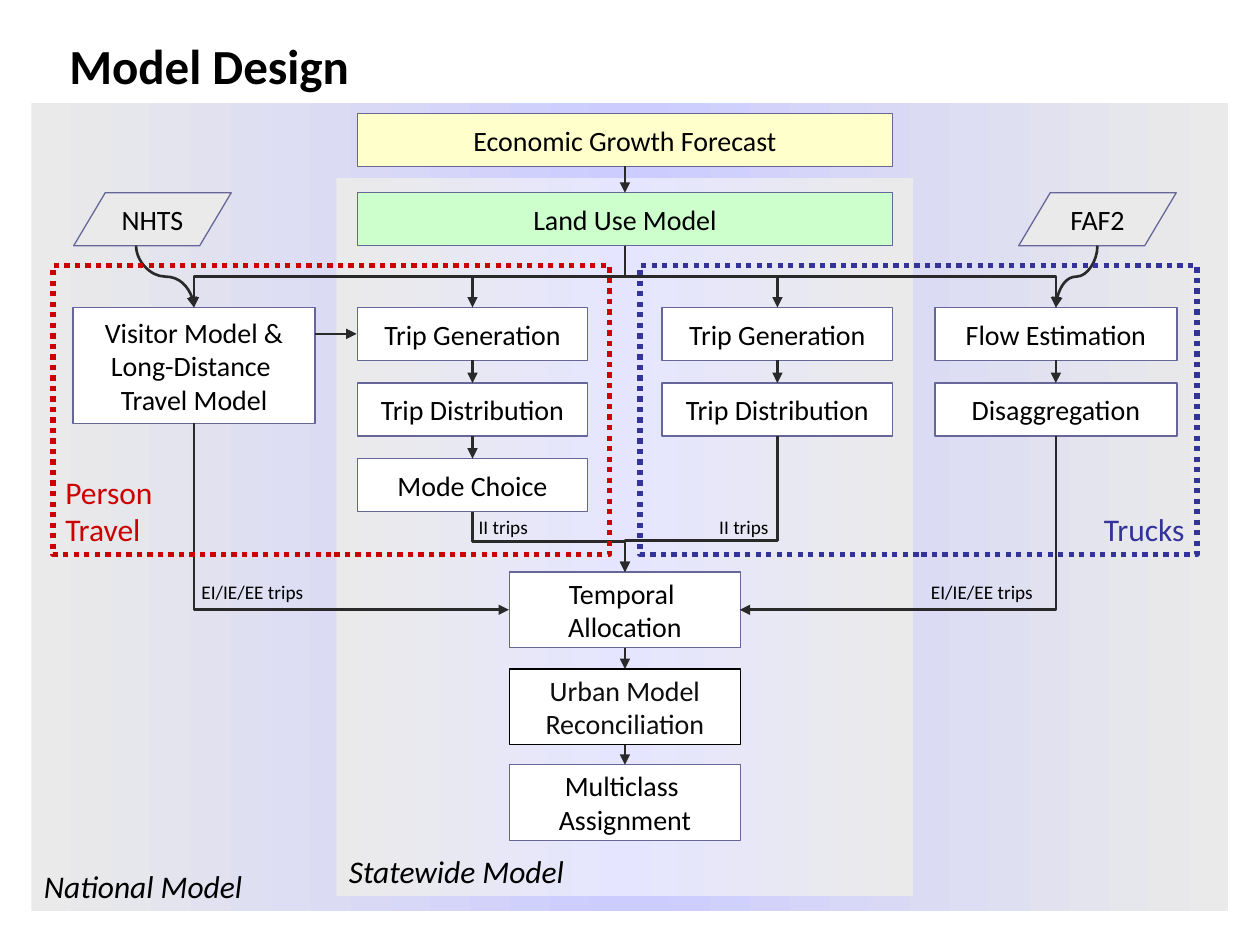
from copy import deepcopy

from lxml.etree import SubElement
from pptx import Presentation
from pptx.dml.color import RGBColor
from pptx.enum.dml import MSO_LINE
from pptx.enum.shapes import MSO_CONNECTOR, MSO_SHAPE
from pptx.enum.text import MSO_ANCHOR, PP_ALIGN
from pptx.oxml.ns import qn
from pptx.util import Inches, Pt

COLORS = {
    "black": "000000", "soft_black": "0D0D0D", "white": "FFFFFF",
    "gray": "EAEAEA", "lavender": "CCCCFF", "pale_lavender": "E5E5FF",
    "yellow": "FFFFCC", "green": "CCFFCC", "outline": "666699",
    "arrow": "292929", "red": "CC0000", "navy": "333399",
}
RGB = {name: RGBColor.from_string(value) for name, value in COLORS.items()}


def write(shape, text, size, color="black", align=PP_ALIGN.LEFT,
          anchor=MSO_ANCHOR.TOP, bold=False, italic=False):
    frame = shape.text_frame
    frame.word_wrap = False
    frame.vertical_anchor = anchor
    paragraph = frame.paragraphs[0]
    paragraph.alignment = align
    for index, line in enumerate(text.split("\n")):
        if index:
            paragraph.add_line_break()
        run = paragraph.add_run()
        run.text = line
        run.font.name = "Calibri"
        run.font.size = Pt(size)
        run.font.bold = bold
        run.font.italic = italic
        run.font.color.rgb = RGB[color]


def connect(x1, y1, x2, y2, preset="line", bend=None):
    turned = preset != "line"
    left, top, right, bottom = x1, y1, x2, y2
    if turned:
        mid_x, mid_y = (x1 + x2) / 2, (y1 + y2) / 2
        half_w, half_h = (y2 - y1) / 2, abs(x2 - x1) / 2
        left, right = mid_x - half_w, mid_x + half_w
        top, bottom = mid_y - half_h, mid_y + half_h
    arrow = slide.shapes.add_connector(
        MSO_CONNECTOR.STRAIGHT, Inches(left), Inches(top), Inches(right), Inches(bottom))
    arrow.line.color.rgb = RGB["arrow"]
    arrow.line.width = Pt(1.5)
    SubElement(arrow.line._get_or_add_ln(), qn("a:tailEnd"), type="triangle")
    properties = arrow._element.spPr
    SubElement(properties, qn("a:effectLst"))
    if turned:
        frame = properties.find(qn("a:xfrm"))
        frame.set("rot", "16200000" if x2 > x1 else "5400000")
        if x2 > x1:
            frame.set("flipH", "1")
        geometry = properties.find(qn("a:prstGeom"))
        geometry.set("prst", preset)
        if bend is not None:
            SubElement(geometry.find(qn("a:avLst")), qn("a:gd"),
                       name="adj1", fmla=f"val {round(bend * 100000)}")


presentation = Presentation()
presentation.slide_width = Inches(10)
presentation.slide_height = Inches(7.5)
slide = presentation.slides.add_slide(presentation.slide_layouts[5])

title = slide.shapes.title
title.left, title.top, title.width, title.height = map(Inches, (0.45, 0.23, 2.44, 0.57))
write(title, "Model Design", 28, bold=True)

for text, rect, middle in [
    ("National Model", (0.25, 0.82, 9.5, 6.41), "lavender"),
    ("Statewide Model", (2.67, 1.41, 4.58, 5.7), "pale_lavender"),
]:
    region = slide.shapes.add_shape(MSO_SHAPE.RECTANGLE, *map(Inches, rect))
    region.shadow.inherit = False
    region.line.fill.background()
    region.fill.gradient()
    region.fill.gradient_angle = 0
    first, last = region.fill.gradient_stops
    first.color.rgb = last.color.rgb = RGB["gray"]
    first.position, last.position = 0, 1
    center_stop = deepcopy(first._gs)
    first._gs.addnext(center_stop)
    center = region.fill.gradient_stops[1]
    center.position = 0.5
    center.color.rgb = RGB[middle]
    write(region, text, 18, anchor=MSO_ANCHOR.BOTTOM, italic=True)

VISITOR_X, PERSON_X, CENTER_X, TRUCK_X, FLOW_X = 1.54, 3.75, 4.96, 6.17, 8.38
ROW_TOPS = [2.44, 3.04, 3.64]
STEP_H, STAGE_H, STEP_W, SIDE_W, WIDE_W = 0.42, 0.6, 1.83, 1.92, 4.25
STAGE_TOPS = [4.54, 5.31, 6.07]
FORECAST_Y, LAND_USE_Y, BRANCH_Y = 0.9, 1.53, 1.95

process, data = MSO_SHAPE.FLOWCHART_PROCESS, MSO_SHAPE.FLOWCHART_DATA
for text, kind, center_x, top, width, height, fill in [
    ("Economic Growth Forecast", process, CENTER_X, FORECAST_Y, WIDE_W, STEP_H, "yellow"),
    ("Land Use Model", process, CENTER_X, LAND_USE_Y, WIDE_W, STEP_H, "green"),
    ("NHTS", data, 1.21, LAND_USE_Y, 1.25, STEP_H, "gray"),
    ("FAF2", data, 8.71, LAND_USE_Y, 1.25, STEP_H, "gray"),
    ("Visitor Model &\nLong-Distance \nTravel Model", process,
     VISITOR_X, ROW_TOPS[0], SIDE_W, 0.92, "white"),
    ("Trip Generation", process, PERSON_X, ROW_TOPS[0], STEP_W, STEP_H, "white"),
    ("Trip Distribution", process, PERSON_X, ROW_TOPS[1], STEP_W, STEP_H, "white"),
    ("Mode Choice", process, PERSON_X, ROW_TOPS[2], STEP_W, STEP_H, "white"),
    ("Trip Generation", process, TRUCK_X, ROW_TOPS[0], STEP_W, STEP_H, "white"),
    ("Trip Distribution", process, TRUCK_X, ROW_TOPS[1], STEP_W, STEP_H, "white"),
    ("Flow Estimation", process, FLOW_X, ROW_TOPS[0], SIDE_W, STEP_H, "white"),
    ("Disaggregation", process, FLOW_X, ROW_TOPS[1], SIDE_W, STEP_H, "white"),
    ("Temporal \nAllocation", process, CENTER_X, STAGE_TOPS[0], STEP_W, STAGE_H, "white"),
    ("Urban Model\nReconciliation", process, CENTER_X, STAGE_TOPS[1], STEP_W, STAGE_H, "white"),
    ("Multiclass \nAssignment", process, CENTER_X, STAGE_TOPS[2], STEP_W, STAGE_H, "white"),
]:
    step = slide.shapes.add_shape(
        kind, Inches(center_x - width / 2), Inches(top), Inches(width), Inches(height))
    reconciliation = text.startswith("Urban")
    step.shadow.inherit = False
    step.fill.solid()
    step.fill.fore_color.rgb = RGB[fill]
    step.line.color.rgb = RGB["black" if reconciliation else "outline"]
    step.line.width = Pt(0.75)
    write(step, text, 16, "soft_black" if reconciliation else "black",
          PP_ALIGN.CENTER, MSO_ANCHOR.MIDDLE)

for x, top, bottom in [
    (CENTER_X, FORECAST_Y + STEP_H, LAND_USE_Y),
    (PERSON_X, ROW_TOPS[0] + STEP_H, ROW_TOPS[1]),
    (PERSON_X, ROW_TOPS[1] + STEP_H, ROW_TOPS[2]),
    (TRUCK_X, ROW_TOPS[0] + STEP_H, ROW_TOPS[1]),
    (FLOW_X, ROW_TOPS[0] + STEP_H, ROW_TOPS[1]),
    (CENTER_X, STAGE_TOPS[0] + STAGE_H, STAGE_TOPS[1]),
    (CENTER_X, STAGE_TOPS[1] + STAGE_H, STAGE_TOPS[2]),
]:
    connect(x, top, x, bottom)
connect(2.5, 2.65, 2.83, 2.65)

for x in (VISITOR_X, PERSON_X, TRUCK_X, FLOW_X):
    connect(CENTER_X, BRANCH_Y, x, ROW_TOPS[0], "bentConnector3", 0.5)
for source_x, target_x in [(1.08, VISITOR_X), (8.71, FLOW_X)]:
    connect(source_x, BRANCH_Y, target_x, ROW_TOPS[0], "curvedConnector3", 0.5)
connect(PERSON_X, 4.06, CENTER_X, STAGE_TOPS[0], "bentConnector3", 0.5)
connect(TRUCK_X, 3.46, CENTER_X, STAGE_TOPS[0], "bentConnector3", 0.77)
connect(VISITOR_X, 3.36, 4.04, 4.84, "bentConnector2")
connect(FLOW_X, 3.46, 5.87, 4.84, "bentConnector2")

for text, left, color, align in [
    ("Trucks", 5.08, "navy", PP_ALIGN.RIGHT),
    ("Person \nTravel", 0.42, "red", PP_ALIGN.LEFT),
]:
    market = slide.shapes.add_shape(
        MSO_SHAPE.RECTANGLE, Inches(left), Inches(2.11), Inches(4.42), Inches(2.29))
    market.shadow.inherit = False
    market.fill.background()
    market.line.color.rgb = RGB[color]
    market.line.width = Pt(3)
    market.line.dash_style = MSO_LINE.ROUND_DOT
    write(market, text, 18, color, align, MSO_ANCHOR.BOTTOM)

for text, left, top, width in [
    ("EI/IE/EE trips", 7.29, 4.56, 1.11),
    ("EI/IE/EE trips", 1.5, 4.56, 1.02),
    ("II trips", 3.7, 4.04, 0.61),
    ("II trips", 5.61, 4.04, 0.61),
]:
    flow_label = slide.shapes.add_textbox(
        Inches(left), Inches(top), Inches(width), Inches(0.28))
    write(flow_label, text, 11)

presentation.save("out.pptx")
